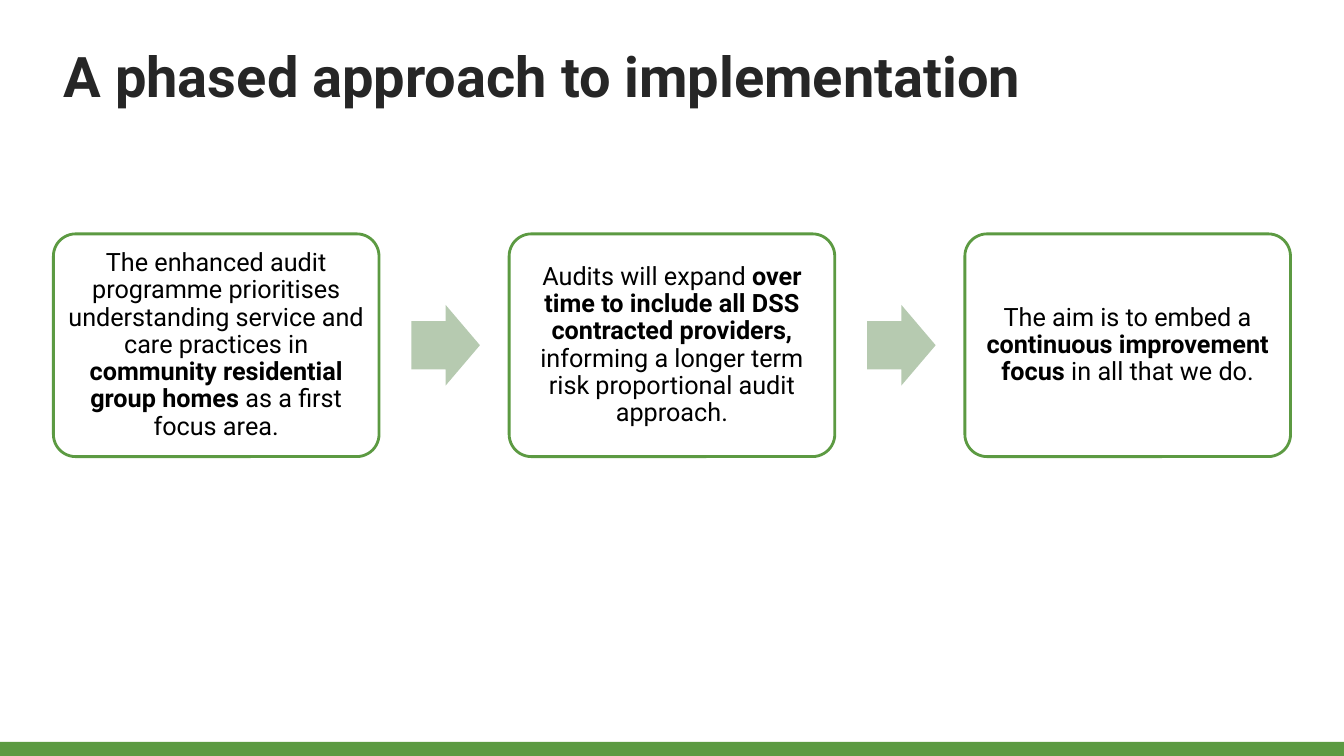
from pptx import Presentation
from pptx.dml.color import RGBColor
from pptx.enum.shapes import MSO_SHAPE
from pptx.enum.text import MSO_ANCHOR, PP_ALIGN
from pptx.util import Inches, Pt

RECT, ROUND, ARROW = MSO_SHAPE.RECTANGLE, MSO_SHAPE.ROUNDED_RECTANGLE, MSO_SHAPE.RIGHT_ARROW
MIDDLE, BOTTOM = MSO_ANCHOR.MIDDLE, MSO_ANCHOR.BOTTOM
CENTER = PP_ALIGN.CENTER

THEME = {
    "font": "Roboto", "title": Pt(40), "body": Pt(18), "line": Pt(2),
    "green": RGBColor(0x5C, 0x9A, 0x42), "sage": RGBColor(0xB6, 0xCA, 0xB0),
    "white": RGBColor(0xFF, 0xFF, 0xFF), "black": RGBColor(0, 0, 0),
    "dark": RGBColor(0x26, 0x26, 0x26),
}

# Grid in inches
WIDE, HIGH = 13.33, 7.5
LEFT, TOP, STEP = 0.53, 2.32, 4.52
BOX_W, BOX_H = 3.23, 2.21
ARROW_W, ARROW_H, GAP = 0.68, 0.8, 0.32
BAR = 0.14

# Each step: plain lead, bold key phrase, plain tail
STEPS = [
    ("The enhanced audit programme prioritises understanding service and care practices in ",
     "community residential group homes ", "as a first focus area."),
    ("Audits will expand ", "over time to include all DSS contracted providers,",
     " informing a longer term risk proportional audit approach."),
    ("The aim is to embed a ", "continuous improvement focus", " in all that we do."),
]

deck = Presentation()
deck.slide_width, deck.slide_height = Inches(WIDE), Inches(HIGH)
slide = deck.slides.add_slide(deck.slide_layouts[6])


def add_form(kind, x, y, w, h, fill):
    form = slide.shapes.add_shape(kind, Inches(x), Inches(y), Inches(w), Inches(h))
    form.shadow.inherit = False
    form.fill.solid()
    form.fill.fore_color.rgb = THEME[fill]
    form.line.fill.background()
    return form


def style(run, size, color, bold):
    run.font.name = THEME["font"]
    run.font.size = THEME[size]
    run.font.color.rgb = THEME[color]
    run.font.bold = bold


# Footer bar
add_form(RECT, 0, HIGH - BAR, WIDE, BAR, "green")

# Title
title = slide.shapes.add_textbox(Inches(0.63), Inches(-0.07), Inches(12.3), Inches(1.35))
frame = title.text_frame
frame.word_wrap = True
frame.vertical_anchor = BOTTOM
frame.margin_left = frame.margin_top = frame.margin_right = 0
frame.margin_bottom = Inches(0.2)
frame.text = "A phased approach to implementation"
style(frame.paragraphs[0].runs[0], "title", "dark", True)

# Step boxes, with an arrow before all but the first
for col, parts in enumerate(STEPS):
    x = LEFT + col * STEP
    if col:
        arrow = add_form(ARROW, x - STEP + BOX_W + GAP, TOP + (BOX_H - ARROW_H) / 2,
                         ARROW_W, ARROW_H, "sage")
        arrow.adjustments[0], arrow.adjustments[1] = 0.6, 0.5

    box = add_form(ROUND, x, TOP, BOX_W, BOX_H, "white")
    box.adjustments[0] = 0.1
    box.line.color.rgb = THEME["green"]
    box.line.width = THEME["line"]

    frame = box.text_frame
    frame.word_wrap = True
    frame.vertical_anchor = MIDDLE
    frame.margin_left = frame.margin_right = Inches(0.07)
    frame.margin_top = frame.margin_bottom = Inches(0.07)
    para = frame.paragraphs[0]
    para.alignment = CENTER
    para.line_spacing = 0.9
    for spot, words in enumerate(parts):
        run = para.add_run()
        run.text = words
        style(run, "body", "black", spot == 1)

deck.save("out.pptx")
